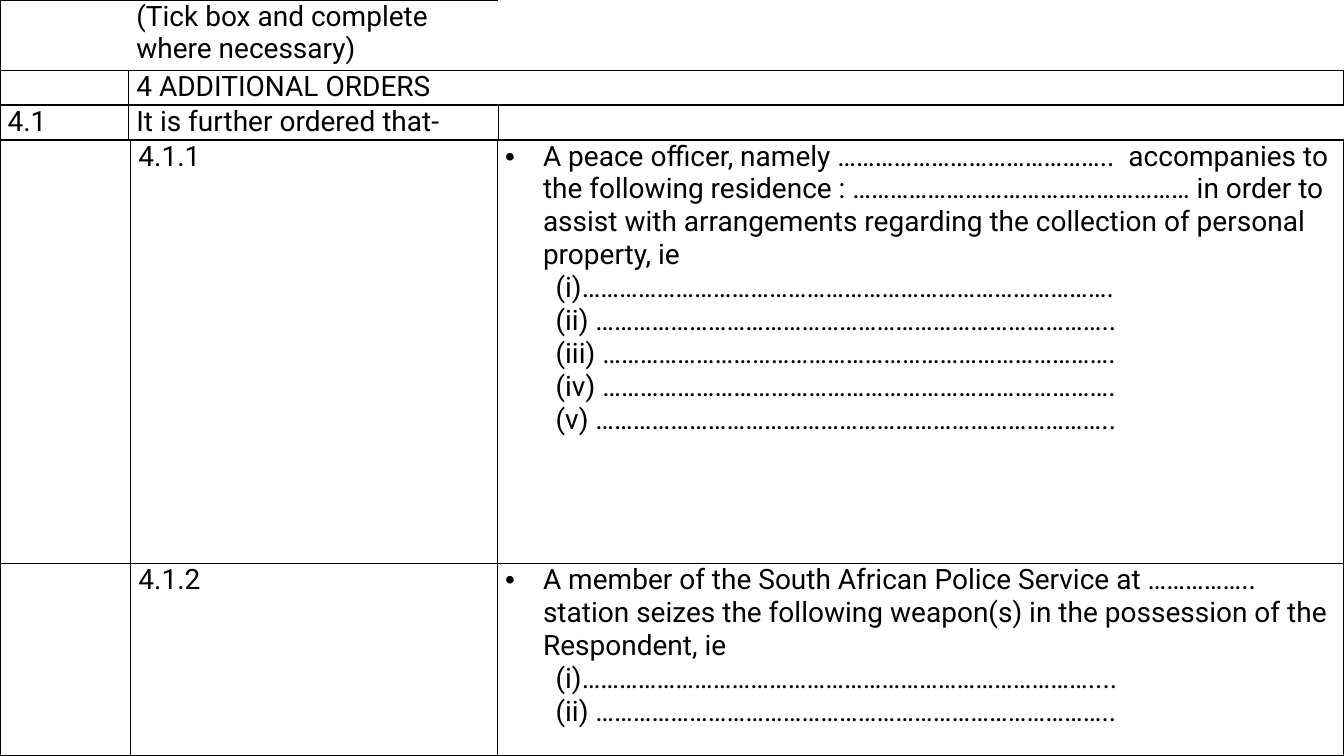
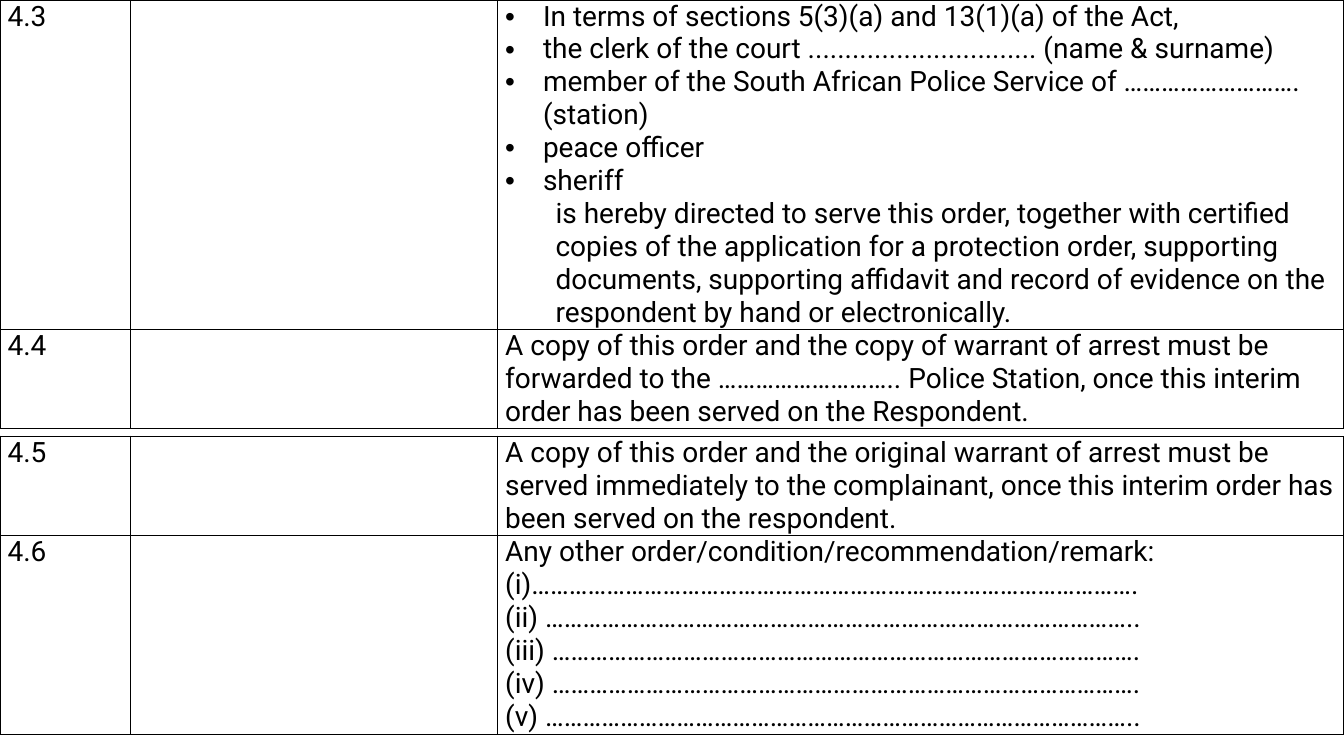
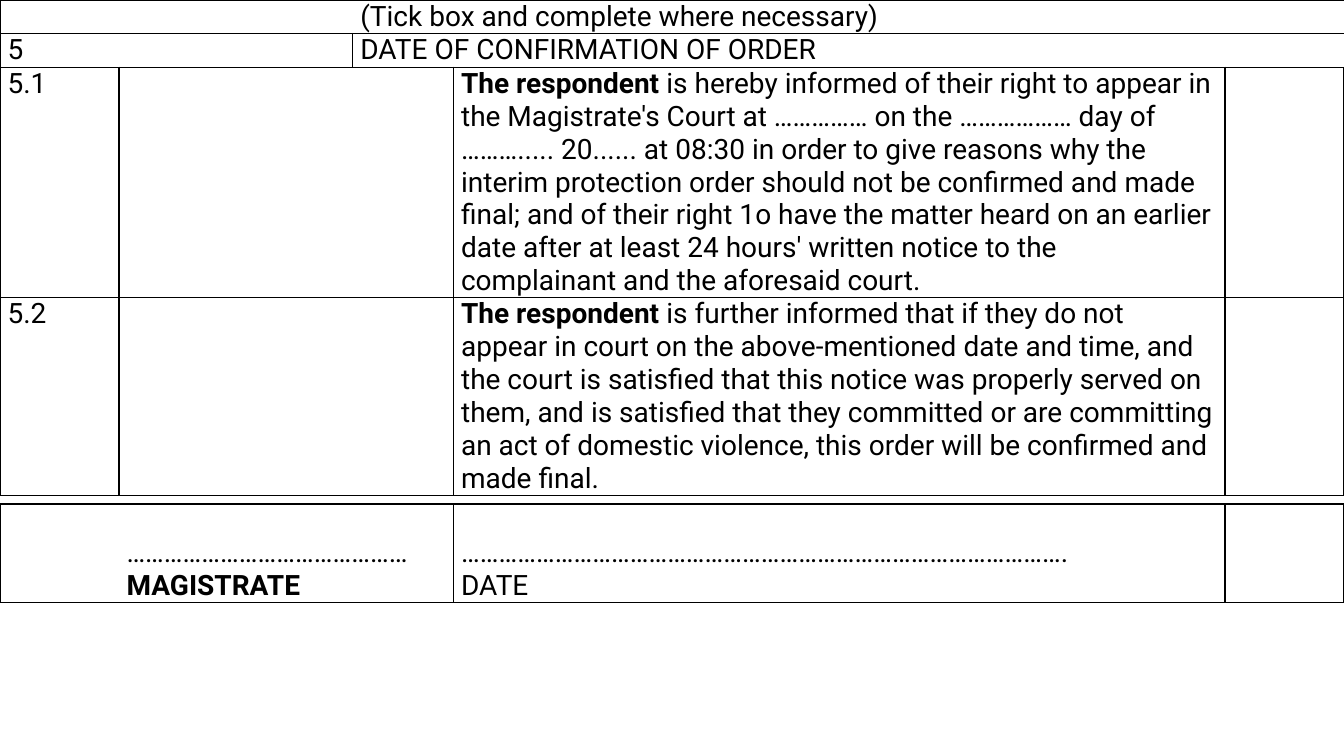
import dataclasses

import lxml.etree
import pptx
import pptx.dml.color
import pptx.enum.text
import pptx.oxml.ns
import pptx.util

Pt = pptx.util.Pt
qn = pptx.oxml.ns.qn


@dataclasses.dataclass(frozen=True)
class Theme:
    """Colours, type and measures shared by all slides."""

    ink: str = "000000"
    font: str = "Roboto"
    size: float = 20
    rule: float = 1
    inset: float = 5.4
    hang: float = 27
    indent: float = 36
    width: float = 960
    height: float = 540


THEME = Theme()
ORDER_COLS = (93.5, 262, 604.5)
NOTICE_COLS = (85, 239, 551, 85)


def bullet(text):
    """Describe a bulleted paragraph."""
    return dict(text=text, indent=THEME.hang, mark="•")


def inner(text):
    """Describe an indented paragraph."""
    return dict(text=text, indent=THEME.indent)


def write(tf, text, lead="", bold=False, indent=0, mark=""):
    """Write one paragraph, with an optional bold lead, indent and bullet."""
    p = tf.paragraphs[0]
    if p.runs:
        p = tf.add_paragraph()
    for part, heavy in ((lead, True), (text, bold)):
        if part:
            r = p.add_run()
            r.text = part
            r.font.name = THEME.font
            r.font.size = Pt(THEME.size)
            r.font.bold = heavy
            r.font.color.rgb = pptx.dml.color.RGBColor.from_string(THEME.ink)
    if indent:
        pPr = p._p.get_or_add_pPr()
        pPr.set("marL", str(Pt(indent)))
        pPr.set("indent", str(-Pt(indent) if mark else 0))
        if mark:
            font = lxml.etree.SubElement(pPr, qn("a:buFont"))
            font.set("typeface", "Arial")
            lxml.etree.SubElement(pPr, qn("a:buChar")).set("char", mark)


def rule_cell(cell, edges):
    """Rule the named edges of a cell and clear the others."""
    tcPr = cell._tc.get_or_add_tcPr()
    for edge in "lrtb":
        ln = lxml.etree.SubElement(tcPr, qn("a:ln" + edge.upper()))
        ln.set("w", str(Pt(THEME.rule)))
        if edge in edges:
            fill = lxml.etree.SubElement(ln, qn("a:solidFill"))
            lxml.etree.SubElement(fill, qn("a:srgbClr")).set("val", THEME.ink)
        else:
            lxml.etree.SubElement(ln, qn("a:noFill"))
    cell.fill.background()


def form_table(s, top, cols, heights, rows, edges=None, spans=(), anchor="TOP"):
    """Place a ruled form table across the slide at the given top."""
    frame = s.shapes.add_table(len(rows), len(cols), 0, Pt(top), Pt(sum(cols)), Pt(sum(heights)))
    table = frame.table
    table.first_row = table.horz_banding = False
    for col, width in zip(table.columns, cols):
        col.width = Pt(width)
    for i, (row, height) in enumerate(zip(rows, heights)):
        table.rows[i].height = Pt(height)
        for j, content in enumerate(row):
            cell = table.cell(i, j)
            cell.margin_left = cell.margin_right = Pt(THEME.inset)
            cell.margin_top = cell.margin_bottom = 0
            cell.vertical_anchor = pptx.enum.text.MSO_ANCHOR[anchor]
            rule_cell(cell, (edges or {}).get((i, j), "lrtb"))
            for item in [content] if isinstance(content, str) else content:
                if item:
                    write(cell.text_frame, **(dict(text=item) if isinstance(item, str) else item))
    for first, last in spans:
        table.cell(*first).merge(table.cell(*last))


def additional_orders(s):
    """Fill the slide with the first additional orders."""
    form_table(
        s, 0, (92, 264, 604), (50.5, 24.5, 25),
        [
            ["", "(Tick box and complete where necessary)", ""],
            ["", "4 ADDITIONAL ORDERS", ""],
            ["4.1", "It is further ordered that-", ""],
        ],
        edges={(0, 0): "ltb", (0, 1): "tb", (0, 2): "b", (2, 2): "lt"},
        spans=[((1, 1), (1, 2))],
    )
    officer = [
        bullet("A peace officer, namely ……………………………………..  accompanies to the following residence : "
               "……………………………………………… in order to assist with arrangements regarding the "
               "collection of personal property, ie"),
        inner("(i)…………………………………………………………………………."),
        inner("(ii) ……………………………………………………………………….."),
        inner("(iii) ………………………………………………………………………."),
        inner("(iv) ………………………………………………………………………."),
        inner("(v) ……………………………………………………………………….."),
    ]
    weapons = [
        bullet("A member of the South African Police Service at …………….. station seizes the following "
               "weapon(s) in the possession of the Respondent, ie"),
        inner("(i)………………………………………………………………………...."),
        inner("(ii) ……………………………………………………………………….."),
    ]
    form_table(s, 100, ORDER_COLS, (302.5, 137.5), [["", "4.1.1", officer], ["", "4.1.2", weapons]])


def service_orders(s):
    """Fill the slide with the orders on service and other remarks."""
    service = [
        bullet("In terms of sections 5(3)(a) and 13(1)(a) of the Act,"),
        bullet("the clerk of the court ............................... (name & surname)"),
        bullet("member of the South African Police Service of ………………………. (station)"),
        bullet("peace officer"),
        bullet("sheriff"),
        inner("is hereby directed to serve this order, together with certified copies of the application "
              "for a protection order, supporting documents, supporting affidavit and record of evidence "
              "on the respondent by hand or electronically."),
    ]
    station = ("A copy of this order and the copy of warrant of arrest must be forwarded to the "
               "……………………….. Police Station, once this interim order has been served on the Respondent.")
    complainant = ("A copy of this order and the original warrant of arrest must be served immediately to "
                   "the complainant, once this interim order has been served on the respondent.")
    remarks = [
        "Any other order/condition/recommendation/remark:",
        "(i)…………………………………………………………………………………….",
        "(ii) …………………………………………………………………………………..",
        "(iii) ………………………………………………………………………………….",
        "(iv) ………………………………………………………………………………….",
        "(v) …………………………………………………………………………………..",
    ]
    form_table(s, 0, ORDER_COLS, (235, 71), [["4.3", "", service], ["4.4", "", station]])
    form_table(s, 311.5, ORDER_COLS, (71, 142), [["4.5", "", complainant], ["4.6", "", remarks]])


def confirmation(s):
    """Fill the slide with the confirmation notice and signatures."""
    form_table(
        s, 0, (252, 708), (24, 24),
        [["", "(Tick box and complete where necessary)"], ["5", "DATE OF CONFIRMATION OF ORDER"]],
        edges={(0, 0): "ltb", (0, 1): "tb", (1, 1): "ltb"},
    )
    appear = (" is hereby informed of their right to appear in the Magistrate's Court at …………… on the "
              "……………… day of ………..... 20...... at 08:30 in order to give reasons why the interim "
              "protection order should not be confirmed and made final; and of their right 1o have the "
              "matter heard on an earlier date after at least 24 hours' written notice to the complainant "
              "and the aforesaid court.")
    absent = (" is further informed that if they do not appear in court on the above-mentioned date and "
              "time, and the court is satisfied that this notice was properly served on them, and is "
              "satisfied that they committed or are committing an act of domestic violence, this order "
              "will be confirmed and made final.")
    notices = [
        [number, "", [dict(text=text, lead="The respondent")], ""]
        for number, text in (("5.1", appear), ("5.2", absent))
    ]
    form_table(s, 48, NOTICE_COLS, (164, 141.5), notices)
    magistrate = ["………………………………………", dict(text="MAGISTRATE", bold=True)]
    date = ["…………………………………………………………………………………….", "DATE"]
    form_table(
        s, 360, NOTICE_COLS, (70.5,), [["", magistrate, date, ""]],
        edges={(0, 0): "ltb", (0, 1): "trb"}, anchor="BOTTOM",
    )


def main():
    """Build and save the presentation."""
    prs = pptx.Presentation()
    prs.slide_width, prs.slide_height = Pt(THEME.width), Pt(THEME.height)
    for build in (additional_orders, service_orders, confirmation):
        build(prs.slides.add_slide(prs.slide_layouts[6]))
    prs.save("out.pptx")


if __name__ == "__main__":
    main()
